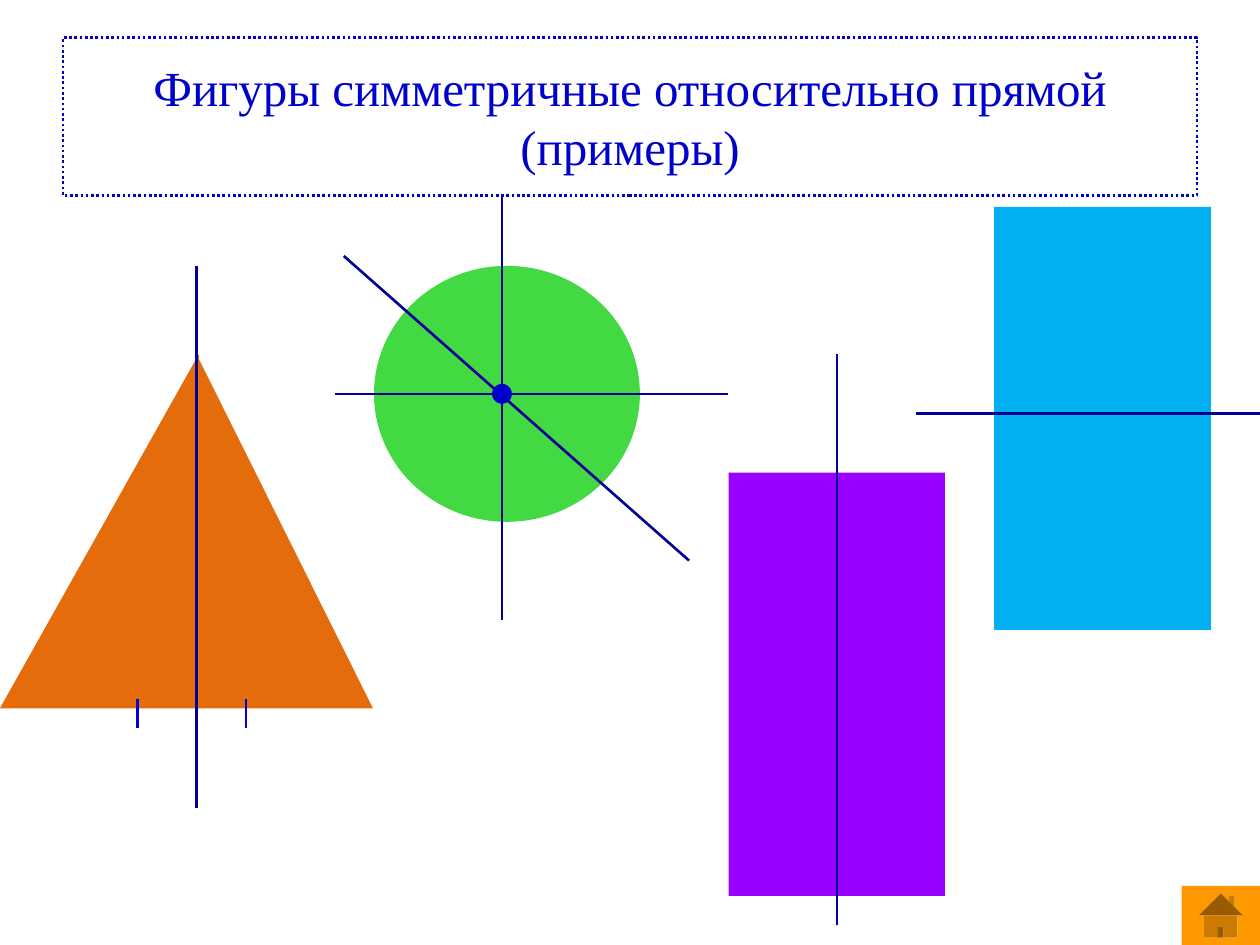
from lxml.etree import SubElement
from pptx import Presentation
from pptx.dml.color import RGBColor
from pptx.enum.dml import MSO_LINE
from pptx.enum.shapes import MSO_CONNECTOR, MSO_SHAPE
from pptx.enum.text import MSO_ANCHOR, MSO_AUTO_SIZE, PP_ALIGN
from pptx.oxml.ns import qn
from pptx.util import Cm, Pt

BLUE = RGBColor(0x00, 0x00, 0xCC)
NAVY = RGBColor(0x00, 0x00, 0x99)
SKY = RGBColor(0x00, 0xB0, 0xF0)
VIOLET = RGBColor(0x99, 0x00, 0xFF)
GREEN = RGBColor(0x00, 0xCC, 0x00)
ORANGE = RGBColor(0xE4, 0x6C, 0x0A)
AMBER = RGBColor(0xFF, 0x99, 0x00)


def write_text(frame, text, *, font, size, color, align):
    paragraph = frame.paragraphs[0]
    paragraph.alignment = align
    run = paragraph.add_run()
    run.text = text
    run.font.name = font
    run.font.size = Pt(size)
    run.font.color.rgb = color


class SymmetrySlide:
    font = "Times New Roman"
    line_width = Pt(1.5)

    def __init__(self, slide):
        self.slide = slide

    def title(self, text, left, top, width, height):
        heading = self.slide.shapes.title
        heading.left, heading.top = Cm(left), Cm(top)
        heading.width, heading.height = Cm(width), Cm(height)
        heading.line.color.rgb = BLUE
        heading.line.width = self.line_width
        heading.line.dash_style = MSO_LINE.ROUND_DOT
        frame = heading.text_frame
        frame.word_wrap = True
        frame.auto_size = MSO_AUTO_SIZE.NONE
        frame.vertical_anchor = MSO_ANCHOR.MIDDLE
        write_text(frame, text, font=self.font, size=28, color=BLUE,
                   align=PP_ALIGN.CENTER)

    def figure(self, preset, left, top, width, height, color,
               opacity=100, mirrored=False):
        figure = self.slide.shapes.add_shape(
            preset, Cm(left), Cm(top), Cm(width), Cm(height))
        figure.shadow.inherit = False
        figure.fill.solid()
        figure.fill.fore_color.rgb = color
        figure.line.fill.background()
        properties = figure.element.spPr
        if opacity < 100:
            tint = properties.find(qn("a:solidFill")).find(qn("a:srgbClr"))
            SubElement(tint, qn("a:alpha"), val=str(opacity * 1000))
        if mirrored:
            properties.find(qn("a:xfrm")).set("flipH", "1")

    def line(self, x1, y1, x2, y2, color=NAVY):
        line = self.slide.shapes.add_connector(
            MSO_CONNECTOR.STRAIGHT, Cm(x1), Cm(y1), Cm(x2), Cm(y2))
        line.line.color.rgb = color
        line.line.width = self.line_width
        SubElement(line.element.spPr, qn("a:effectLst"))


def main():
    deck = Presentation()
    deck.slide_width, deck.slide_height = Cm(25.4), Cm(19.05)
    page = SymmetrySlide(deck.slides.add_slide(deck.slide_layouts[5]))

    page.title("Фигуры симметричные относительно прямой (примеры)",
               1.27, 0.76, 22.86, 3.18)

    # Blue rectangle: halves below and above the horizontal axis
    blue_axis = 8.33
    page.figure(MSO_SHAPE.RECTANGLE, 20.04, blue_axis, 4.37, 4.37, SKY)
    page.figure(MSO_SHAPE.RECTANGLE, 20.04, 4.17, 4.37, blue_axis - 4.17, SKY)

    # Violet rectangle: halves on both sides of the vertical axis
    violet_axis, half_width = 16.87, 2.18
    for left in (violet_axis, violet_axis - half_width):
        page.figure(MSO_SHAPE.RECTANGLE, left, 9.53, half_width, 8.53, VIOLET)

    # Circle
    page.figure(MSO_SHAPE.OVAL, 7.54, 5.36, 5.36, 5.16, GREEN, opacity=74)

    # Triangle: two right triangles back to back
    triangle_axis = 3.96
    page.figure(MSO_SHAPE.RIGHT_TRIANGLE, triangle_axis, 7.14, 3.56, 7.14, ORANGE)
    page.figure(MSO_SHAPE.RIGHT_TRIANGLE, 0, 7.14, 4.01, 7.14, ORANGE,
                mirrored=True)

    # Axes of symmetry
    center_x, center_y = 10.12, 7.94
    page.line(triangle_axis, 5.36, triangle_axis, 16.28)
    page.line(center_x, 3.96, center_x, 12.5)
    page.line(14.68, center_y, 6.76, center_y)
    page.line(6.93, 5.16, 13.89, 11.3)
    page.line(25.81, blue_axis, 18.47, blue_axis)
    page.line(violet_axis, 7.14, violet_axis, 18.64)

    # Equal-length marks on the triangle base
    for mark_x in (2.77, 4.96):
        page.line(mark_x, 14.09, mark_x, 14.68, BLUE)

    # Circle centre
    dot = 0.4
    page.figure(MSO_SHAPE.OVAL, center_x - dot / 2, center_y - dot / 2,
                dot, dot, BLUE)

    # Home button
    page.figure(MSO_SHAPE.ACTION_BUTTON_HOME, 23.82, 17.86, 1.58, 1.19, AMBER)

    deck.save("out.pptx")


if __name__ == "__main__":
    main()
